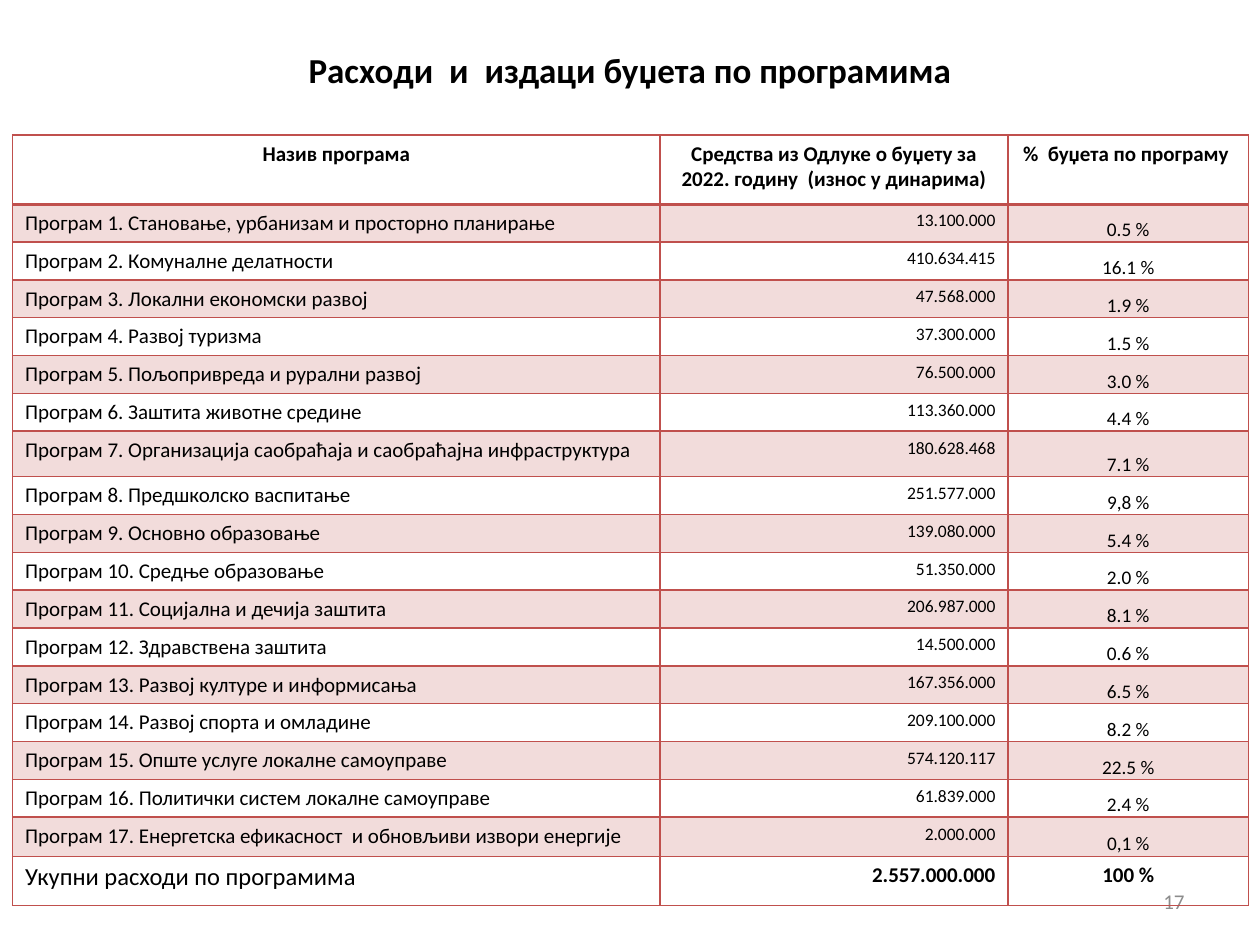
import pptx
import pptx.util
import pptx.dml.color
import pptx.enum.text
import pptx.oxml
import pptx.oxml.ns
from lxml import etree

Inches = pptx.util.Inches
ALIGN = pptx.enum.text.PP_ALIGN
ANCHOR = pptx.enum.text.MSO_ANCHOR

COLORS = {"text": "000000", "number": "8C8C8C", "accent": "C0504D"}
TINT_PERCENT = 20

COLUMN_WIDTHS = [5.14, 2.76, 1.91]
ROW_HEIGHT = 0.29
HEADINGS = [
    "Назив програма",
    "Средства из Одлуке о буџету за 2022. годину  (износ у динарима)",
    "%  буџета по програму ",
]
PROGRAMS = [
    ("Становање, урбанизам и просторно планирање", "13.100.000", "0.5 %"),
    ("Комуналне делатности", "410.634.415", "16.1 %"),
    ("Локални економски развој", "47.568.000", "1.9 %"),
    ("Развој туризма", "37.300.000", "1.5 %"),
    ("Пољопривреда и рурални развој", "76.500.000", "3.0 %"),
    ("Заштита животне средине", "113.360.000", "4.4 %"),
    ("Организација саобраћаја и саобраћајна инфраструктура", "180.628.468", "7.1 %"),
    ("Предшколско васпитање", "251.577.000", "9,8 %"),
    ("Основно образовање", "139.080.000", "5.4 %"),
    ("Средње образовање", "51.350.000", "2.0 %"),
    ("Социјална и дечија заштита", "206.987.000", "8.1 %"),
    ("Здравствена заштита", "14.500.000", "0.6 %"),
    ("Развој културе и информисања", "167.356.000", "6.5 %"),
    ("Развој спорта и омладине", "209.100.000", "8.2 %"),
    ("Опште услуге локалне самоуправе", "574.120.117", "22.5 %"),
    ("Политички систем локалне самоуправе", "61.839.000", "2.4 %"),
    ("Енергетска ефикасност  и обновљиви извори енергије", "2.000.000", "0,1 %"),
]
TOTALS = ["Укупни расходи по програмима", "2.557.000.000", "100 %"]
TOTAL_ROW = len(PROGRAMS) + 1
SPECIAL_HEIGHTS = {0: 0.55, 7: 0.36, 17: 0.31, TOTAL_ROW: 0.39}


def write_text(frame, text, size=12, bold=False, color="text", align=ALIGN.LEFT):
    paragraph = frame.paragraphs[0]
    paragraph.alignment = align
    run = paragraph.add_run()
    run.text = text
    run.font.name = "Calibri"
    run.font.size = pptx.util.Pt(size)
    run.font.bold = bold
    run.font.color.rgb = pptx.dml.color.RGBColor.from_string(COLORS[color])


def add_label(slide, left, top, width, height, text, **text_format):
    label = slide.shapes.add_textbox(
        Inches(left), Inches(top), Inches(width), Inches(height))
    label.text_frame.word_wrap = True
    label.text_frame.vertical_anchor = ANCHOR.MIDDLE
    write_text(label.text_frame, text, **text_format)


def set_borders(cell, top=1, bottom=1):
    properties = cell._tc.get_or_add_tcPr()
    widths = {"lnL": 1, "lnR": 1, "lnT": top, "lnB": bottom}
    for position, (side, points) in enumerate(widths.items()):
        border = pptx.oxml.parse_xml(
            f'<a:{side} {pptx.oxml.ns.nsdecls("a")} w="{pptx.util.Pt(points)}">'
            f'<a:solidFill><a:srgbClr val="{COLORS["accent"]}"/></a:solidFill>'
            f'</a:{side}>')
        properties.insert(position, border)


def fill_cell(cell, tinted):
    if not tinted:
        cell.fill.background()
        return
    cell.fill.solid()
    cell.fill.fore_color.rgb = pptx.dml.color.RGBColor.from_string(COLORS["accent"])
    tint = cell._tc.tcPr.find(
        f'{pptx.oxml.ns.qn("a:solidFill")}/{pptx.oxml.ns.qn("a:srgbClr")}')
    etree.SubElement(tint, pptx.oxml.ns.qn("a:alpha"), val=str(TINT_PERCENT * 1000))


def set_percent_layout(cell):
    cell.vertical_anchor = ANCHOR.BOTTOM
    cell.margin_left = cell.margin_right = cell.margin_top = Inches(0.01)
    cell.margin_bottom = 0


def add_budget_table(slide):
    programs = [(f"Програм {number}. {name}", amount, share)
                for number, (name, amount, share) in enumerate(PROGRAMS, 1)]
    rows = [HEADINGS, *programs, TOTALS]
    heights = [SPECIAL_HEIGHTS.get(index, ROW_HEIGHT) for index in range(len(rows))]
    budget = slide.shapes.add_table(
        len(rows), len(COLUMN_WIDTHS), Inches(0.1), Inches(1.07),
        Inches(sum(COLUMN_WIDTHS)), Inches(sum(heights))).table
    budget.first_row = budget.horz_banding = False
    for column, width in zip(budget.columns, COLUMN_WIDTHS):
        column.width = Inches(width)

    aligns = [ALIGN.LEFT, ALIGN.RIGHT, ALIGN.CENTER]
    for row_index, values in enumerate(rows):
        budget.rows[row_index].height = Inches(heights[row_index])
        is_header = row_index == 0
        is_total = row_index == TOTAL_ROW
        if is_header:
            sizes = [12, 12, 12]
        elif is_total:
            sizes = [14, 12, 12]
        else:
            sizes = [12, 10, 11]
        for column_index, value in enumerate(values):
            cell = budget.cell(row_index, column_index)
            write_text(
                cell.text_frame, value, size=sizes[column_index],
                bold=is_header or (is_total and column_index > 0),
                align=ALIGN.CENTER if is_header else aligns[column_index])
            fill_cell(cell, tinted=row_index % 2 == 1 and not is_total)
            set_borders(cell, top=2 if row_index == 1 else 1,
                        bottom=2 if is_header else 1)
            if column_index == 2 and not is_header and not is_total:
                set_percent_layout(cell)


def main():
    presentation = pptx.Presentation()
    presentation.slide_width = Inches(10)
    presentation.slide_height = Inches(7.5)
    slide = presentation.slides.add_slide(presentation.slide_layouts[6])
    add_label(slide, 0.74, 0.13, 8.52, 0.85,
              "Расходи  и  издаци буџета по програмима",
              size=20, bold=True, align=ALIGN.CENTER)
    add_label(slide, 7.17, 6.95, 2.33, 0.4, "17", color="number", align=ALIGN.RIGHT)
    add_budget_table(slide)
    presentation.save("out.pptx")


if __name__ == "__main__":
    main()
